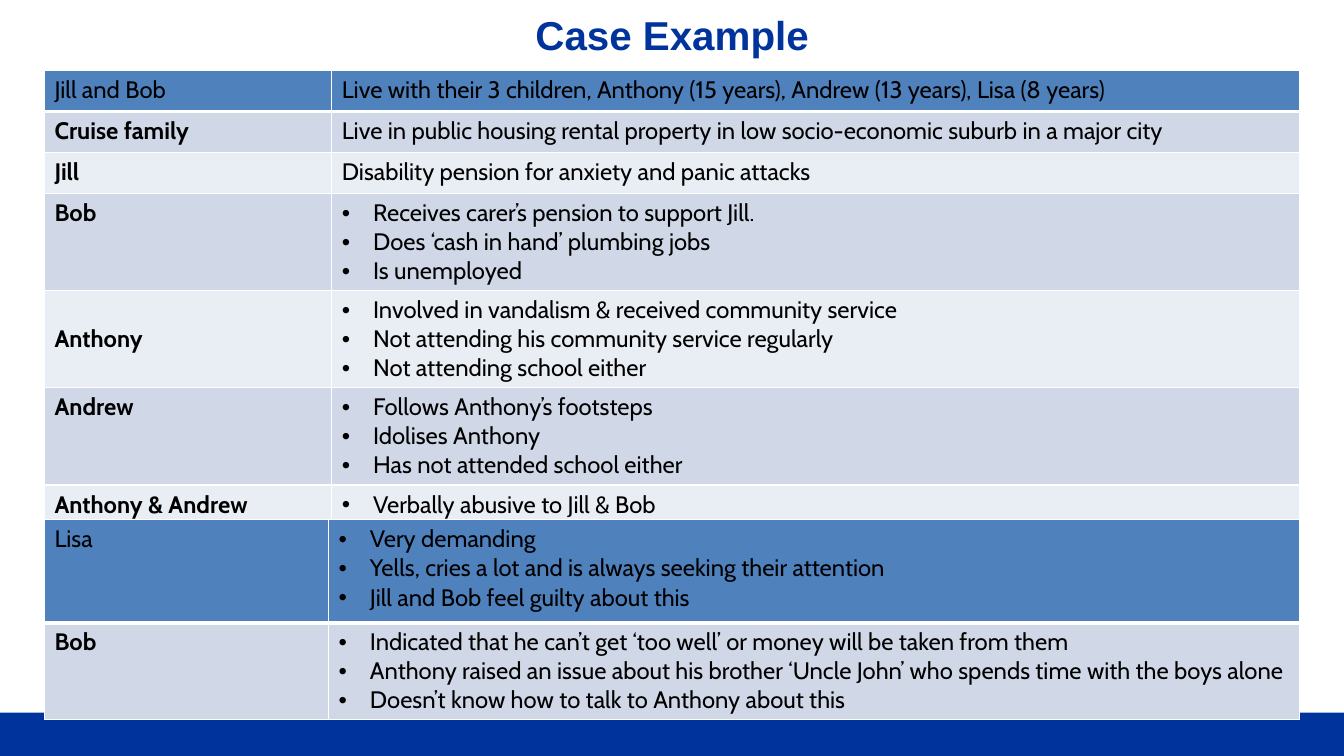
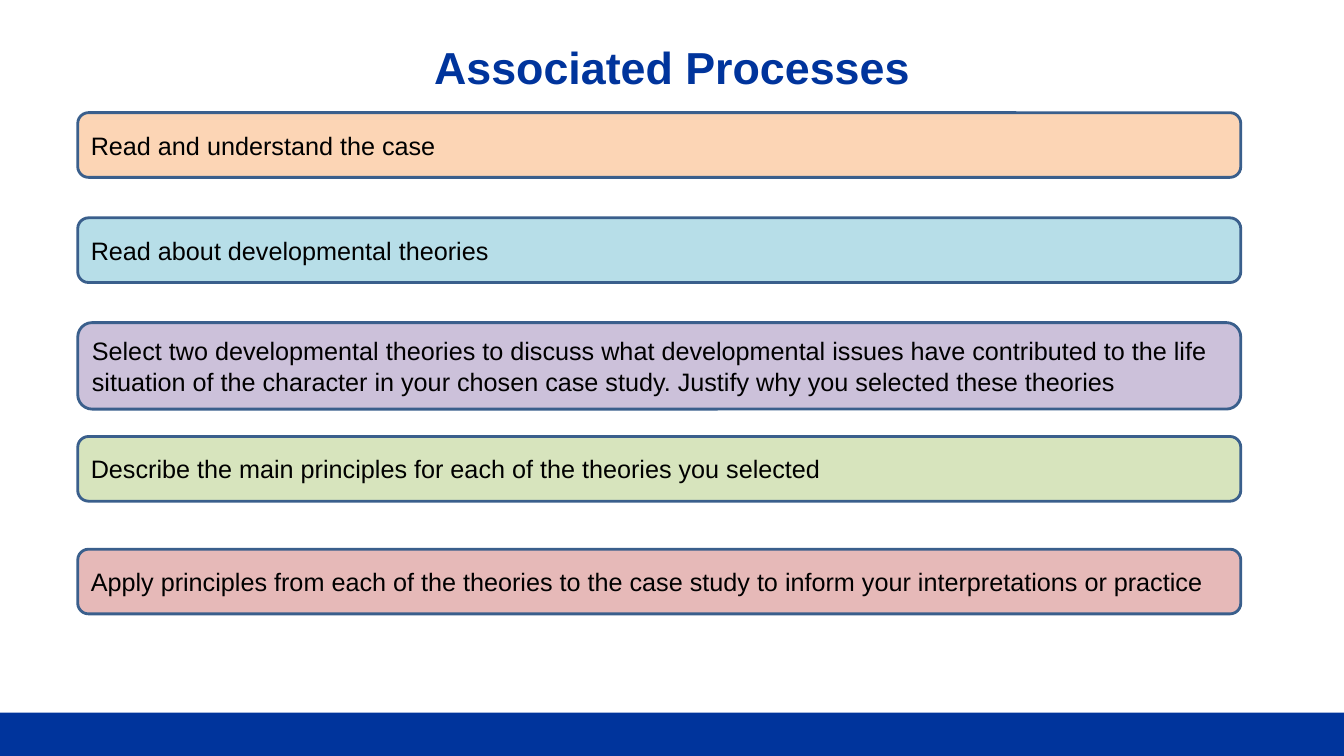
from lxml import etree
from pptx import Presentation
from pptx.dml.color import RGBColor
from pptx.enum.shapes import MSO_SHAPE
from pptx.enum.text import MSO_ANCHOR, PP_ALIGN
from pptx.oxml.ns import qn
from pptx.util import Cm, Pt

RECT, ROUND = MSO_SHAPE.RECTANGLE, MSO_SHAPE.ROUNDED_RECTANGLE
TOP, MIDDLE = MSO_ANCHOR.TOP, MSO_ANCHOR.MIDDLE
LEFT, CENTER = PP_ALIGN.LEFT, PP_ALIGN.CENTER

NAVY, WHITE, BLACK, OUTLINE = "00349C", "FFFFFF", "000000", "3A5F8C"
HEADER, BANDS = "4F81BD", ("D0D8E8", "E9EDF4")
WIDTH, HEIGHT, BAND_H = 33.87, 19.05, 1.09
TABLE_X, INDENT = 1.12, 0.79
ROW_1, ROW_3, ROW_LISA = 1.03, 2.45, 2.59
BOX_X, BOX_W = 1.96, 29.31

FAMILY = [
    (ROW_1, TOP, "Jill and Bob",
     "Live with their 3 children, Anthony (15 years), Andrew (13 years), Lisa (8 years)"),
    (ROW_1, TOP, "Cruise family",
     "Live in public housing rental property in low socio-economic suburb in a major city"),
    (ROW_1, TOP, "Jill", "Disability pension for anxiety and panic attacks"),
    (ROW_3, TOP, "Bob", ["Receives carer’s pension to support Jill.",
                         "Does ‘cash in hand’ plumbing jobs",
                         "Is unemployed"]),
    (ROW_3, MIDDLE, "Anthony", ["Involved in vandalism & received community service",
                                "Not attending his community service regularly",
                                "Not attending school either"]),
    (ROW_3, TOP, "Andrew", ["Follows Anthony’s footsteps",
                            "Idolises Anthony",
                            "Has not attended school either"]),
    (ROW_1, TOP, "Anthony & Andrew", ["Verbally abusive to Jill & Bob"]),
]
CONCERNS = [
    (ROW_LISA, TOP, "Lisa", ["Very demanding",
                             "Yells, cries a lot and is always seeking their attention",
                             "Jill and Bob feel guilty about this"]),
    (ROW_3, TOP, "Bob", [
        "Indicated that he can’t get ‘too well’ or money will be taken from them",
        "Anthony raised an issue about his brother ‘Uncle John’ who spends time with the boys alone",
        "Doesn’t know how to talk to Anthony about this"]),
]
TABLES = [(1.78, (7.24, 24.38), FAMILY), (13.1, (7.16, 24.46), CONCERNS)]

PROCESSES = [
    (2.84, 1.63, "FCD5B5", "Read and understand the case"),
    (5.49, 1.63, "B7DEE8", "Read about developmental theories"),
    (8.13, 2.18, "CCC1DA",
     "Select two developmental theories to discuss what developmental issues have contributed "
     "to the life situation of the character in your chosen case study. "
     "Justify why you selected these theories"),
    (11, 1.63, "D7E4BD", "Describe the main principles for each of the theories you selected"),
    (13.84, 1.63, "E6B9B8",
     "Apply principles from each of the theories to the case study to inform your "
     "interpretations or practice"),
]


def rgb(color):
    return RGBColor.from_string(color)


def style(p, size, font="Arial", color=BLACK, bold=False, align=LEFT):
    p.alignment = align
    for r in p.runs:
        r.font.name, r.font.size, r.font.bold = font, Pt(size), bold
        r.font.color.rgb = rgb(color)


def add_box(s, kind, x, y, w, h, fill, line=None):
    sp = s.shapes.add_shape(kind, Cm(x), Cm(y), Cm(w), Cm(h))
    sp.shadow.inherit = False
    sp.fill.solid()
    sp.fill.fore_color.rgb = rgb(fill)
    if line:
        sp.line.color.rgb = rgb(line)
        sp.line.width = Pt(2)
    else:
        sp.line.fill.background()
    return sp


def add_slide(prs, title, y, h, size):
    s = prs.slides.add_slide(prs.slide_layouts[6])
    add_box(s, RECT, 0, HEIGHT - BAND_H, WIDTH, BAND_H, NAVY)
    tf = s.shapes.add_textbox(Cm(1.7), Cm(y), Cm(30.48), Cm(h)).text_frame
    tf.word_wrap = True
    tf.vertical_anchor = MIDDLE
    tf.text = title
    style(tf.paragraphs[0], size, color=NAVY, bold=True, align=CENTER)
    return s


def add_bullet(p):
    pPr = p._p.get_or_add_pPr()
    pPr.set("marL", str(Cm(INDENT)))
    pPr.set("indent", str(-Cm(INDENT)))
    etree.SubElement(pPr, qn("a:buFont"), typeface="Arial")
    etree.SubElement(pPr, qn("a:buChar"), char="•")


def add_borders(cell, bottom):
    tcPr = cell._tc.get_or_add_tcPr()
    for side, width in (("L", 1), ("R", 1), ("T", 1), ("B", bottom)):
        ln = etree.SubElement(tcPr, qn(f"a:ln{side}"), w=str(Pt(width)))
        fill = etree.SubElement(ln, qn("a:solidFill"))
        etree.SubElement(fill, qn("a:srgbClr"), val=WHITE)


def fill_cell(cell, content, fill, anchor, header, bold):
    add_borders(cell, 3 if header else 1)
    cell.fill.solid()
    cell.fill.fore_color.rgb = rgb(fill)
    cell.vertical_anchor = anchor
    bulleted = isinstance(content, list)
    cell.text_frame.text = "\n".join(content) if bulleted else content
    for p in cell.text_frame.paragraphs:
        if bulleted:
            add_bullet(p)
        style(p, 17, "Cabin", bold=bold)


def add_case_table(s, y, widths, rows):
    total = sum(row[0] for row in rows)
    table = s.shapes.add_table(len(rows), 2, Cm(TABLE_X), Cm(y),
                               Cm(sum(widths)), Cm(total)).table
    table.horz_banding = False
    table.first_row = False
    for col, width in zip(table.columns, widths):
        col.width = Cm(width)
    for i, (height, anchor, name, details) in enumerate(rows):
        table.rows[i].height = Cm(height)
        header = i == 0
        fill = HEADER if header else BANDS[(i - 1) % 2]
        fill_cell(table.cell(i, 0), name, fill, anchor, header, not header)
        fill_cell(table.cell(i, 1), details, fill, TOP, header, False)


def main():
    prs = Presentation()
    prs.slide_width, prs.slide_height = Cm(WIDTH), Cm(HEIGHT)

    s = add_slide(prs, "Case Example", 0.1, 1.52, 28.8)
    for y, widths, rows in TABLES:
        add_case_table(s, y, widths, rows)

    s = add_slide(prs, "Associated Processes", 0.76, 1.85, 32)
    for y, h, fill, text in PROCESSES:
        tf = add_box(s, ROUND, BOX_X, y, BOX_W, h, fill, OUTLINE).text_frame
        tf.word_wrap = True
        tf.vertical_anchor = MIDDLE
        tf.text = text
        style(tf.paragraphs[0], 18)

    prs.save("out.pptx")


if __name__ == "__main__":
    main()
